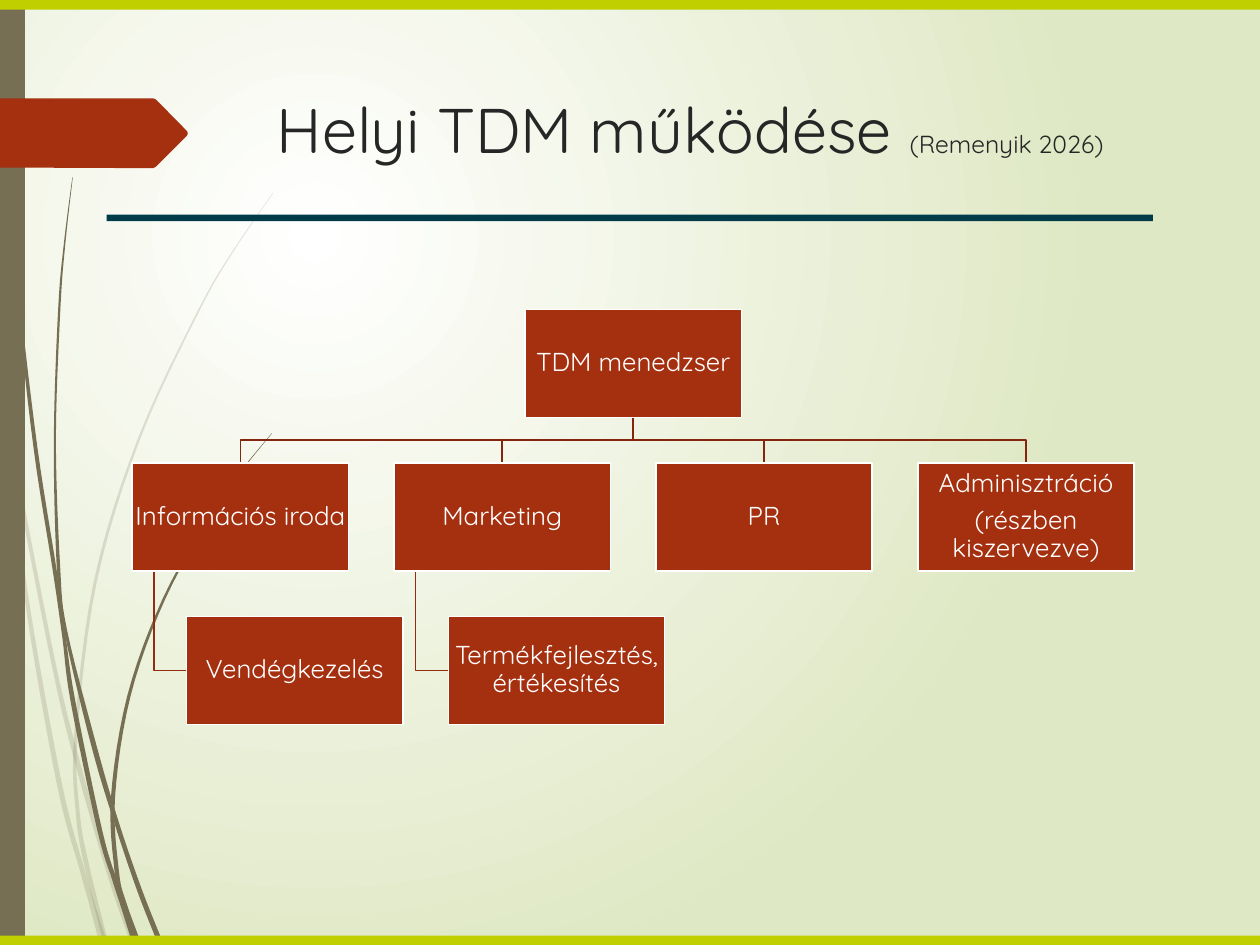
from pptx import Presentation
from pptx.dml.color import RGBColor
from pptx.enum.shapes import MSO_SHAPE
from pptx.enum.text import MSO_ANCHOR, PP_ALIGN
from pptx.oxml import parse_xml
from pptx.oxml.ns import nsdecls
from pptx.util import Pt

THEME = {
    "font": "Quicksand",
    "title_size": Pt(51.2), "source_size": Pt(20), "box_size": Pt(21),
    "line_width": Pt(1.25),
    "white": RGBColor.from_string("FFFFFF"),
    "pale_green": RGBColor.from_string("DFE8C4"),
    "olive": RGBColor.from_string("766F54"),
    "lime": RGBColor.from_string("BFCF00"),
    "rust": RGBColor.from_string("A53010"),
    "teal": RGBColor.from_string("003B4A"),
    "ink": RGBColor.from_string("262626"),
    "bus_line": RGBColor.from_string("84260D"),
    "branch_line": RGBColor.from_string("962C0F"),
}
W, H = 1023.84, 767.52

prs = Presentation()
prs.slide_width, prs.slide_height = Pt(W), Pt(H)
s = prs.slides.add_slide(prs.slide_layouts[6])


def add_outline(points, color, closed=True):
    """Filled outline, or an open bent line, through points given in pt."""
    pts = [(Pt(x), Pt(y)) for x, y in points]
    builder = s.shapes.build_freeform(*pts[0], scale=1.0)
    builder.add_line_segments(pts[1:], close=closed)
    sp = builder.convert_to_shape()
    sp.shadow.inherit = False
    if closed:
        sp.fill.solid()
        sp.fill.fore_color.rgb = THEME[color]
        sp.line.fill.background()
    else:
        sp.fill.background()
        sp.line.color.rgb = THEME[color]
        sp.line.width = THEME["line_width"]
    return sp


def add_rect(x, y, w, h, color):
    sp = s.shapes.add_shape(MSO_SHAPE.RECTANGLE, Pt(x), Pt(y), Pt(w), Pt(h))
    sp.shadow.inherit = False
    sp.fill.solid()
    sp.fill.fore_color.rgb = THEME[color]
    sp.line.fill.background()
    return sp


# Background: radial gradient centred in the upper left
fill = s.background.fill
fill.gradient()
for stop, color in zip(fill.gradient_stops, ("white", "pale_green")):
    stop.color.rgb = THEME[color]
grad = s._element.xpath(".//a:gradFill")[0]
for lin in grad.xpath("a:lin"):
    grad.remove(lin)
grad.append(parse_xml(
    f'<a:path {nsdecls("a")} path="circle">'
    '<a:fillToRect l="50000" t="50000" r="100000" b="100000"/></a:path>'))

# Grass blades: centre line and width as (x, y, width), with opacity in percent
blades = [
    (20, [(0, 297, 1), (8.5, 352, 3.2), (13.5, 385, 3.1), (42.5, 534, 3.5),
          (61, 612, 4.2), (88.7, 708, 4.5), (108.6, H, 4)]),
    (20, [(8, 359, 0.6), (20.9, 481, 3.2), (47.9, 635, 4.2), (66.9, 707, 4),
          (73.8, 731, 4.5), (84.5, H, 6.5)]),
    (20, [(221.8, 157, 0.4), (190.8, 202, 0.9), (162.4, 250.5, 1.4),
          (113, 356.4, 2), (77.4, 472.7, 2.5), (61.6, 597.6, 2.7),
          (63.4, 661.7, 3.2), (70.5, 703, 4), (86.5, H, 4)]),
    (100, [(2.5, 0, 0.5), (6.1, 112, 0.9), (14.8, 238, 2.2), (28.8, 363, 3.2),
           (44.6, 464, 3.2), (52, 517, 2.8), (59.4, 570, 3.9), (81, 674, 4),
           (92.9, 714, 3.8), (100.8, 737, 4.7), (111, H, 6)]),
    (100, [(59, 144, 0.4), (52.6, 197, 1.2), (48.2, 250.6, 1.8),
           (44.6, 357, 1.7), (47.5, 460, 2.8), (53.3, 512, 2.5),
           (76.3, 605.5, 4.3), (94.7, 668, 3.8), (113.4, 723, 4.2),
           (131, H, 4.5)]),
    (100, [(220.8, 352, 0.4), (195.8, 382.7, 0.9), (172.8, 415.4, 1.7),
           (133.2, 486.4, 2.2), (104.8, 565, 2.7), (91.8, 647.6, 3.3),
           (94.9, 708, 3.6), (100.5, 733, 4.2), (113.5, H, 3.5)]),
]
STEPS = 6
for opacity, knots in blades:
    spine = []
    padded = [knots[0], *knots, knots[-1]]
    for a, b, c, d in zip(padded, padded[1:], padded[2:], padded[3:]):
        for t in (i / STEPS for i in range(STEPS)):
            # Catmull-Rom interpolation between knots b and c
            spine.append([
                (2 * q + (r - p) * t + (2 * p - 5 * q + 4 * r - u) * t**2
                 + (3 * q - p - 3 * r + u) * t**3) / 2
                for p, q, r, u in zip(a, b, c, d)])
    spine.append(knots[-1])
    left = [(x - w / 2, y) for x, y, w in spine]
    right = [(x + w / 2, y) for x, y, w in reversed(spine)]
    sp = add_outline(left + right, "olive")
    if opacity < 100:
        rgb = sp._element.spPr.xpath("a:solidFill/a:srgbClr")[0]
        rgb.append(parse_xml(f'<a:alpha {nsdecls("a")} val="{opacity * 1000}"/>'))

# Side bar, edge bands, arrow tab and title rule
add_rect(0, 0, 20.3, H, "olive")
for y in (0, H - 7.6):
    add_rect(0, y, W, 7.8, "lime")
add_outline([(0, 79.9), (124.5, 79.9), (126.7, 80.8), (152, 106.5),
             (152.6, 108.3), (152, 110.2), (126.7, 135.5), (124.5, 136.6),
             (0, 136.1)], "rust")
add_rect(86.6, 174.4, 850.3, 5.2, "teal")

# Title
tf = s.shapes.add_textbox(Pt(217.8), Pt(69.8), Pt(738), Pt(143.3)).text_frame
tf.word_wrap = True
p = tf.paragraphs[0]
for text, size in (("Helyi TDM működése ", "title_size"),
                   ("(Remenyik 2026)", "source_size")):
    r = p.add_run()
    r.text = text
    r.font.name, r.font.size = THEME["font"], THEME[size]
    r.font.color.rgb = THEME["ink"]

# Organisation chart grid
BOX_W, BOX_H = 175.8, 87.8
LEFT, TOP, COL, ROW, INDENT = 107.4, 251.2, 212.8, 124.7, 44.1
MID, BRANCH = 1.5, 17.6
boxes = [  # column, row, paragraphs
    (MID, 0, ["TDM menedzser"]),
    (0, 1, ["Információs iroda"]),
    (1, 1, ["Marketing"]),
    (2, 1, ["PR"]),
    (3, 1, ["Adminisztráció", "(részben kiszervezve)"]),
    (0, 2, ["Vendégkezelés"]),
    (1, 2, ["Termékfejlesztés, értékesítés"]),
]

# Bent links from each box to the one above it
stem_x = LEFT + MID * COL + BOX_W / 2
stem_y, drop_y = TOP + BOX_H, TOP + ROW
bus_y = (stem_y + drop_y) / 2
for col, row, _ in boxes:
    x = LEFT + col * COL
    if row == 1:
        drop_x = x + BOX_W / 2
        add_outline([(stem_x, stem_y), (stem_x, bus_y),
                     (drop_x, bus_y), (drop_x, drop_y)], "bus_line", False)
    elif row == 2:
        y = TOP + row * ROW + BOX_H / 2
        add_outline([(x + BRANCH, drop_y + BOX_H), (x + BRANCH, y),
                     (x + INDENT, y)], "branch_line", False)

# Boxes
frame_format = {"word_wrap": True, "vertical_anchor": MSO_ANCHOR.MIDDLE,
                "margin_left": Pt(1), "margin_right": Pt(1),
                "margin_top": Pt(1), "margin_bottom": Pt(1)}
paragraph_format = {"alignment": PP_ALIGN.CENTER, "line_spacing": 0.9,
                    "space_after": Pt(7.35)}
for col, row, lines in boxes:
    x = LEFT + col * COL + (INDENT if row == 2 else 0)
    sp = add_rect(x, TOP + row * ROW, BOX_W, BOX_H, "rust")
    sp.line.color.rgb = THEME["white"]
    sp.line.width = THEME["line_width"]
    tf = sp.text_frame
    for name, value in frame_format.items():
        setattr(tf, name, value)
    for i, line in enumerate(lines):
        p = tf.add_paragraph() if i else tf.paragraphs[0]
        for name, value in paragraph_format.items():
            setattr(p, name, value)
        r = p.add_run()
        r.text = line
        r.font.name, r.font.size = THEME["font"], THEME["box_size"]
        r.font.color.rgb = THEME["white"]

prs.save("out.pptx")
